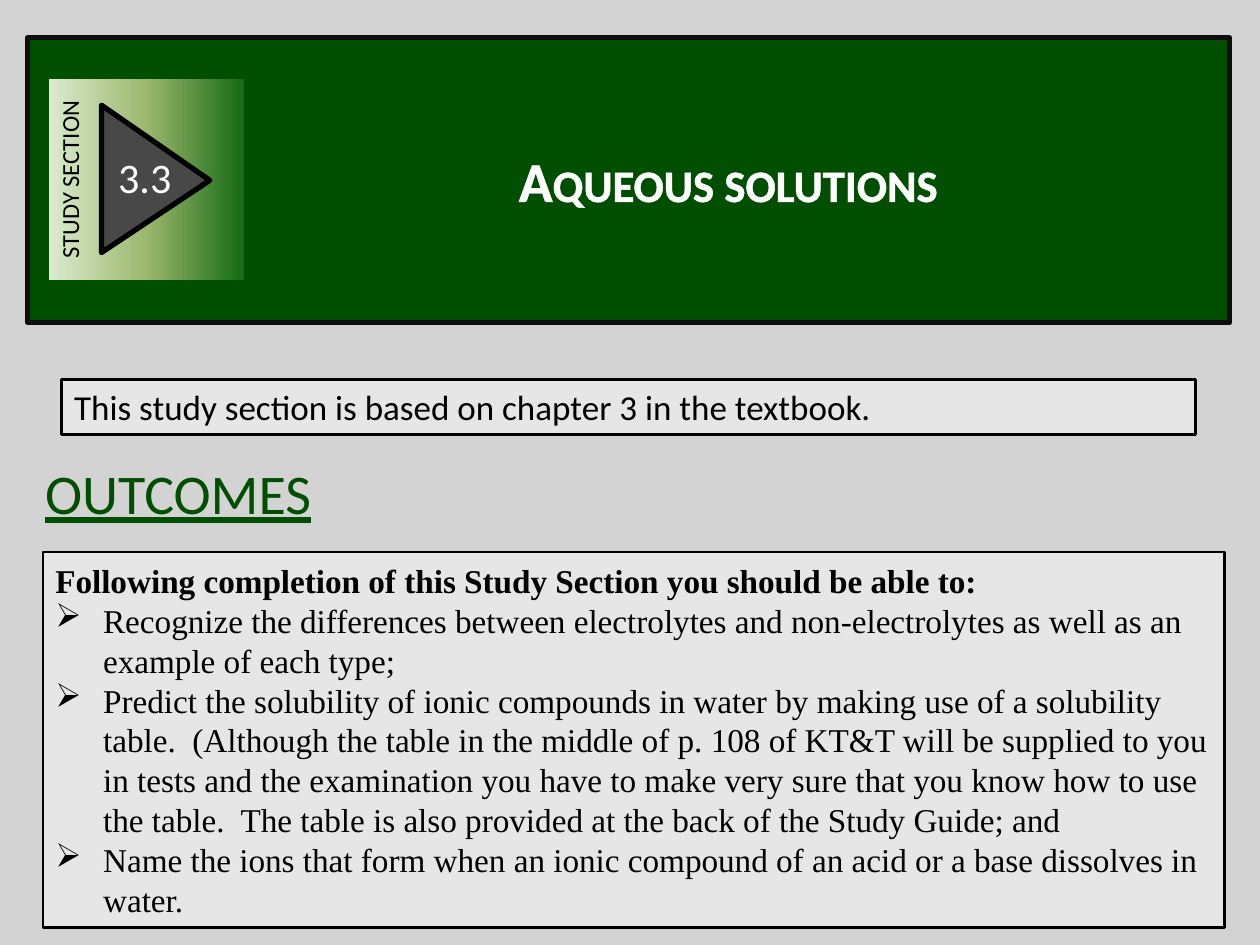
"""Build the title slide of study section 3.3, Aqueous solutions."""
import copy

import lxml.etree
import pptx
import pptx.dml.color
import pptx.enum.shapes
import pptx.enum.text
import pptx.oxml.ns
import pptx.util

Inches = pptx.util.Inches
Pt = pptx.util.Pt
qn = pptx.oxml.ns.qn
SHAPE = pptx.enum.shapes.MSO_SHAPE
ALIGN = pptx.enum.text.PP_ALIGN
ANCHOR = pptx.enum.text.MSO_ANCHOR
FIT = pptx.enum.text.MSO_AUTO_SIZE.SHAPE_TO_FIT_TEXT

COLORS = {
    "page": "D3D3D3", "green": "004E00", "frame": "0D0D0D", "panel": "E6E6E6",
    "arrow": "484848", "black": "000000", "white": "FFFFFF",
    "pale": "DDEBCF", "olive": "9CB86E", "leaf": "156B13",
}
OUTCOMES = [
    "Recognize the differences between electrolytes and non-electrolytes as well as "
    "an example of each type;",
    "Predict the solubility of ionic compounds in water by making use of a solubility "
    "table.  (Although the table in the middle of p. 108 of KT&T will be supplied to "
    "you in tests and the examination you have to make very sure that you know how to "
    "use the table.  The table is also provided at the back of the Study Guide; and",
    "Name the ions that form when an ionic compound of an acid or a base dissolves in "
    "water.",
]


def rgb(name):
    return pptx.dml.color.RGBColor.from_string(COLORS[name])


class SlideBuilder:
    """Holds the style and the current slide."""

    def __init__(self, prs):
        self.slide = prs.slides.add_slide(prs.slide_layouts[6])
        self.slide.background.fill.solid()
        self.slide.background.fill.fore_color.rgb = rgb("page")

    def shape(self, kind, box, fill=None, line=None, width=1.5, rotation=0):
        s = self.slide.shapes.add_shape(kind, *map(Inches, box))
        s.shadow.inherit = False
        s.rotation = rotation
        if fill:
            s.fill.solid()
            s.fill.fore_color.rgb = rgb(fill)
        if line:
            s.line.color.rgb = rgb(line)
            s.line.width = Pt(width)
        else:
            s.line.fill.background()
        return s

    def textbox(self, box, text, size, color, wrap=True, **style):
        s = self.slide.shapes.add_textbox(*map(Inches, box))
        self.label(s, [text], size, color, **style)
        s.text_frame.word_wrap = wrap
        return s

    def label(self, s, lines, size, color="black", font="Calibri",
              align=ALIGN.LEFT, anchor=ANCHOR.TOP):
        tf = s.text_frame
        tf.text = "\n".join(lines)
        tf.word_wrap = True
        tf.auto_size = FIT
        tf.vertical_anchor = anchor
        for p in tf.paragraphs:
            p.alignment = align
            for r in p.runs:
                r.font.size = Pt(size)
                r.font.name = font
                r.font.color.rgb = rgb(color)
        return tf

    def gradient(self, s, names):
        s.fill.gradient()
        s.fill.gradient_angle = 270
        first = next(s.element.iter(qn("a:gs")))
        first.addnext(copy.deepcopy(first))
        for i, (stop, name) in enumerate(zip(s.fill.gradient_stops, names)):
            stop.position = i / (len(names) - 1)
            stop.color.rgb = rgb(name)

    def outline(self, r, color, width):
        ln = lxml.etree.Element(qn("a:ln"), w=str(Pt(width)))
        fill = lxml.etree.SubElement(ln, qn("a:solidFill"))
        lxml.etree.SubElement(fill, qn("a:srgbClr"), val=COLORS[color])
        r._r.get_or_add_rPr().insert(0, ln)

    def bullet(self, p):
        pPr = p._p.get_or_add_pPr()
        pPr.set("marL", str(Inches(0.38)))
        pPr.set("indent", str(-Inches(0.38)))
        lxml.etree.SubElement(pPr, qn("a:buChar"), char="➢")


def main():
    prs = pptx.Presentation()
    prs.slide_width, prs.slide_height = Inches(10), Inches(7.5)
    b = SlideBuilder(prs)

    b.shape(SHAPE.RECTANGLE, (0.22, 0.3, 9.54, 2.26), "green", "frame", 3)
    title = b.textbox((2.11, 1.11, 7.34, 0.64), "Aqueous solutions", 32, "white",
                      align=ALIGN.CENTER)
    r = title.text_frame.paragraphs[0].runs[0]
    r.font.bold = True
    r._r.get_or_add_rPr().set("cap", "small")
    b.outline(r, "white", 0.75)

    badge = b.shape(SHAPE.RECTANGLE, (0.36, 0.65, 1.6, 1.55), rotation=270)
    b.gradient(badge, ["pale", "olive", "leaf"])
    b.label(badge, ["STUDY SECTION"], 14, align=ALIGN.CENTER)
    arrow = b.shape(SHAPE.ISOSCELES_TRIANGLE, (0.65, 0.99, 1.17, 0.86),
                    "arrow", "black", 3, rotation=90)
    arrow.adjustments[0] = 0.51
    number = b.textbox((0.84, 1.15, 0.63, 0.5), "3.3", 24, "white", wrap=False)
    b.slide.shapes.add_group_shape([badge, arrow, number])

    heading = b.textbox((0.26, 3.59, 2.67, 0.64), "OUTCOMES", 32, "green")
    r = heading.text_frame.paragraphs[0].runs[0]
    r.font.underline = True
    b.outline(r, "black", 0.25)

    panel = b.shape(SHAPE.RECTANGLE, (0.34, 4.38, 9.38, 2.98), "panel", "black")
    intro = "Following completion of this Study Section you should be able to:"
    tf = b.label(panel, [intro] + OUTCOMES, 19, font="Times New Roman",
                 anchor=ANCHOR.MIDDLE)
    tf.paragraphs[0].runs[0].font.bold = True
    for p in tf.paragraphs[1:]:
        b.bullet(p)

    note = b.shape(SHAPE.RECTANGLE, (0.49, 3.01, 9, 0.44), "panel", "black")
    b.label(note, ["This study section is based on chapter 3 in the textbook."], 20,
            anchor=ANCHOR.MIDDLE)

    prs.save("out.pptx")


if __name__ == "__main__":
    main()
